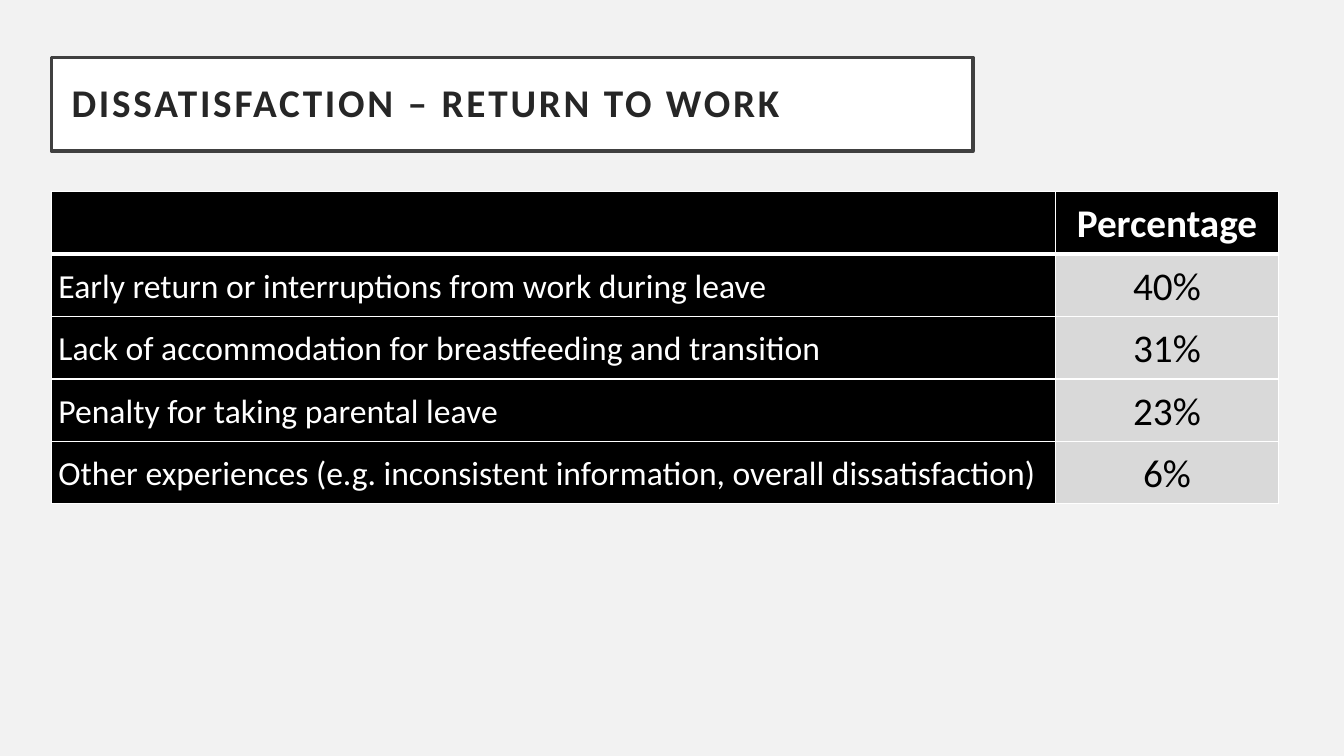
import dataclasses
import typing

import pptx
import pptx.dml.color
import pptx.enum.shapes
import pptx.enum.text
import pptx.oxml
import pptx.oxml.ns
import pptx.util

Inches = pptx.util.Inches
Align = pptx.enum.text.PP_ALIGN
Anchor = pptx.enum.text.MSO_ANCHOR


@dataclasses.dataclass(frozen=True)
class Theme:
    font: str = "Calibri"
    background: str = "F2F2F2"
    white: str = "FFFFFF"
    black: str = "000000"
    value_fill: str = "D9D9D9"
    title_ink: str = "262626"
    title_line: str = "404040"
    large: int = 28
    body: int = 24
    title_spacing: int = 2
    thin: int = 1
    thick: int = 3


@dataclasses.dataclass(frozen=True)
class TextStyle:
    size: int
    color: str
    bold: bool
    align: Align
    line_spacing: float


@dataclasses.dataclass(frozen=True)
class Reason:
    label: str
    share: str


THEME = Theme()
TITLE = TextStyle(THEME.large, THEME.title_ink, True, Align.LEFT, 0.9)
HEADER = TextStyle(THEME.large, THEME.white, True, Align.CENTER, 1.07)
LABEL = TextStyle(THEME.body, THEME.white, False, Align.JUSTIFY, 1.07)
VALUE = TextStyle(THEME.large, THEME.black, False, Align.CENTER, 1.07)

LEFT = 0.51
COLUMN_WIDTHS = (9.96, 2.21)
ROW_HEIGHT = 0.62
REASONS = (
    Reason("Early return or interruptions from work during leave", "40%"),
    Reason("Lack of accommodation for breastfeeding and transition", "31%"),
    Reason("Penalty for taking parental leave", "23%"),
    Reason("Other experiences (e.g. inconsistent information, overall dissatisfaction)", "6%"),
)


def rgb(value: str) -> pptx.dml.color.RGBColor:
    return pptx.dml.color.RGBColor.from_string(value)


def apply(target: typing.Any, values: dict[str, typing.Any]) -> None:
    for name, value in values.items():
        setattr(target, name, value)


def paint(fill: typing.Any, color: str) -> None:
    fill.solid()
    fill.fore_color.rgb = rgb(color)


def margins(side: float, vertical: float) -> dict[str, int]:
    return {
        "margin_left": Inches(side),
        "margin_right": Inches(side),
        "margin_top": Inches(vertical),
        "margin_bottom": Inches(vertical),
    }


def write(frame: typing.Any, text: str, style: TextStyle) -> typing.Any:
    para = frame.paragraphs[0]
    apply(para, {"alignment": style.align, "line_spacing": style.line_spacing})
    span = para.add_run()
    span.text = text
    apply(span.font, {"name": THEME.font, "size": pptx.util.Pt(style.size), "bold": style.bold})
    span.font.color.rgb = rgb(style.color)
    return span


def draw_title(page: typing.Any, text: str) -> None:
    box = page.shapes.add_shape(
        pptx.enum.shapes.MSO_SHAPE.RECTANGLE,
        Inches(LEFT), Inches(0.57), Inches(9.14), Inches(0.93),
    )
    box.shadow.inherit = False
    paint(box.fill, THEME.white)
    paint(box.line.fill, THEME.title_line)
    box.line.width = pptx.util.Pt(2.5)
    apply(box.text_frame, {
        "word_wrap": True, "vertical_anchor": Anchor.MIDDLE, **margins(0.2, 0.2),
    })
    span = write(box.text_frame, text, TITLE)
    span.font._element.set("spc", str(THEME.title_spacing * 100))


def draw_borders(cell: typing.Any, top: int, bottom: int) -> None:
    widths = {"lnL": THEME.thin, "lnR": THEME.thin, "lnT": top, "lnB": bottom}
    properties = cell._tc.get_or_add_tcPr()
    for position, (tag, width) in enumerate(widths.items()):
        properties.insert(position, pptx.oxml.parse_xml(
            f'<a:{tag} {pptx.oxml.ns.nsdecls("a")} w="{pptx.util.Pt(width)}">'
            f'<a:solidFill><a:srgbClr val="{THEME.white}"/></a:solidFill></a:{tag}>'
        ))


def draw_table(page: typing.Any, reasons: tuple[Reason, ...]) -> None:
    contents = [("", "Percentage")] + [(reason.label, reason.share) for reason in reasons]
    table = page.shapes.add_table(
        len(contents), len(COLUMN_WIDTHS), Inches(LEFT), Inches(1.9),
        Inches(sum(COLUMN_WIDTHS)), Inches(ROW_HEIGHT * len(contents)),
    ).table
    for column, width in zip(table.columns, COLUMN_WIDTHS):
        column.width = Inches(width)
    for index, texts in enumerate(contents):
        table.rows[index].height = Inches(ROW_HEIGHT)
        styles = (LABEL, VALUE) if index else (HEADER, HEADER)
        fills = (THEME.black, THEME.value_fill if index else THEME.black)
        top = THEME.thick if index == 1 else THEME.thin
        bottom = THEME.thin if index else THEME.thick
        for cell, text, style, fill in zip(table.rows[index].cells, texts, styles, fills):
            apply(cell, {"vertical_anchor": Anchor.MIDDLE, **margins(0.07, 0)})
            paint(cell.fill, fill)
            draw_borders(cell, top, bottom)
            if text:
                write(cell.text_frame, text, style)


def main() -> None:
    deck = pptx.Presentation()
    apply(deck, {"slide_width": Inches(13.33), "slide_height": Inches(7.5)})
    page = deck.slides.add_slide(deck.slide_layouts[6])
    paint(page.background.fill, THEME.background)
    draw_title(page, "DISSATISFACTION – RETURN TO WORK")
    draw_table(page, REASONS)
    deck.save("out.pptx")


if __name__ == "__main__":
    main()
